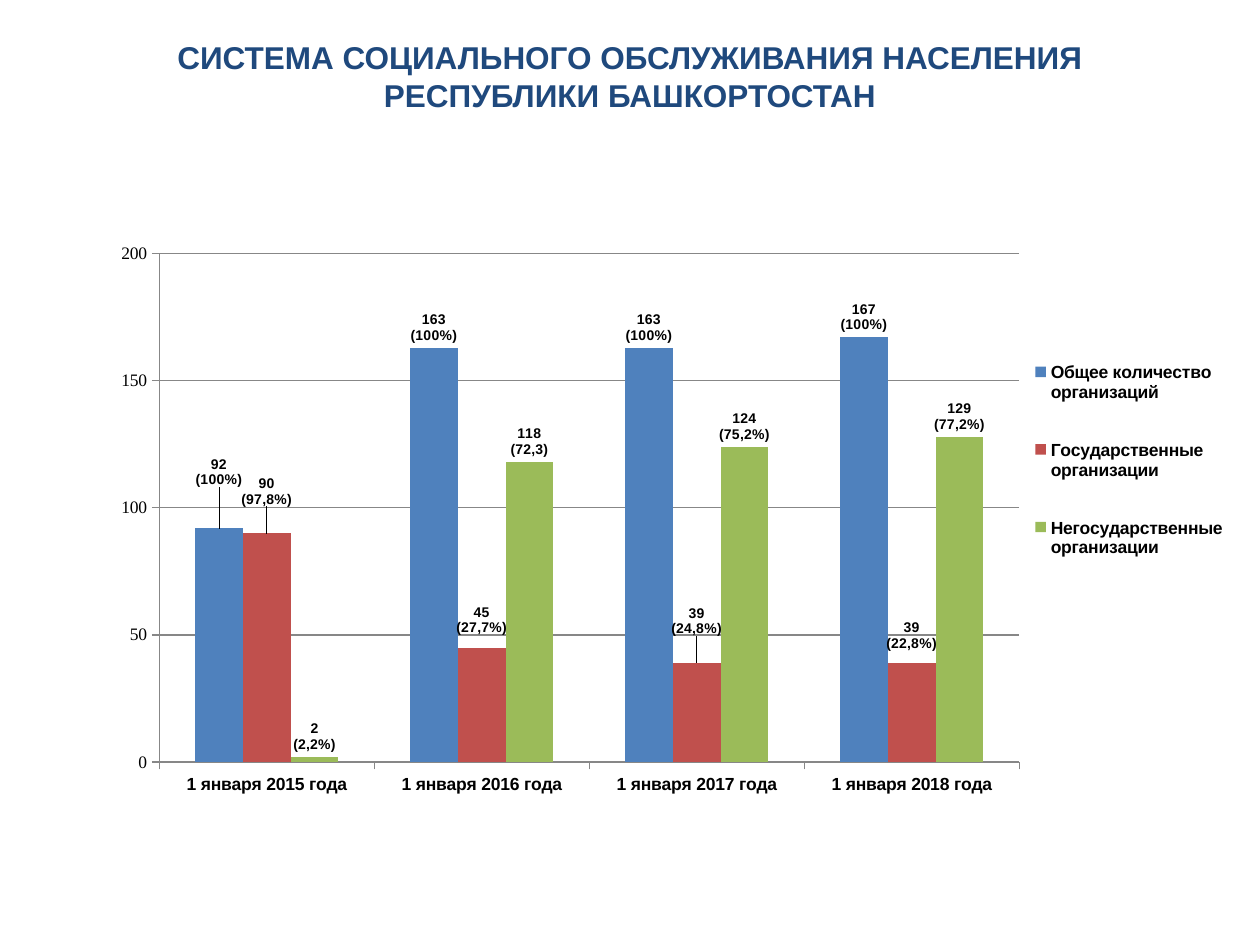
"""Build the slide on social service organisations of Bashkortostan."""
from typing import NamedTuple

from lxml.etree import SubElement
from pptx import Presentation
from pptx.chart.data import CategoryChartData as ChartData
from pptx.dml.color import RGBColor
from pptx.enum.chart import XL_CHART_TYPE as ChartType
from pptx.enum.chart import XL_LABEL_POSITION as LabelPosition
from pptx.enum.chart import XL_LEGEND_POSITION as LegendPosition
from pptx.enum.chart import XL_TICK_MARK as TickMark
from pptx.enum.text import MSO_ANCHOR as Anchor
from pptx.enum.text import PP_ALIGN as Align
from pptx.oxml import parse_xml
from pptx.oxml.ns import nsdecls, qn
from pptx.util import Cm, Pt

NAVY = RGBColor(0x1F, 0x49, 0x7D)
BLUE = RGBColor(0x4F, 0x81, 0xBD)
RED = RGBColor(0xC0, 0x50, 0x4D)
GREEN = RGBColor(0x9B, 0xBB, 0x59)
BLACK = RGBColor(0, 0, 0)
GREY = RGBColor(0x87, 0x87, 0x87)
HEADING = ("СИСТЕМА СОЦИАЛЬНОГО ОБСЛУЖИВАНИЯ НАСЕЛЕНИЯ", "РЕСПУБЛИКИ БАШКОРТОСТАН")
YEARS = range(2015, 2019)


class Group(NamedTuple):
    name: str
    color: RGBColor
    values: tuple[int, ...]
    labels: tuple[tuple[str, str], ...]
    shifts: dict[int, tuple[float, float]]


GROUPS = (
    Group("Общее количество организаций", BLUE, (92, 163, 163, 167),
          (("92", "(100%)"), ("163", "(100%)"), ("163", "(100%)"), ("167", "(100%)")),
          {0: (0, -0.05)}),
    Group("Государственные организации", RED, (90, 45, 39, 39),
          (("90", "(97,8%)"), ("45", "(27,7%)"), ("39", "(24,8%)"), ("39", "(22,8%)")),
          {0: (0, -0.03), 1: (0, -0.01), 2: (0, -0.03), 3: (0, -0.01)}),
    Group("Негосударственные организации", GREEN, (2, 118, 124, 128),
          (("2", "(2,2%)"), ("118", "(72,3)"), ("124", "(75,2%)"), ("129", "(77,2%)")),
          {}),
)


def make_layout(**settings):
    """Return a manual chart layout holding the given settings."""
    layout = parse_xml(f"<c:layout {nsdecls('c')}><c:manualLayout/></c:layout>")
    for name, value in settings.items():
        SubElement(layout[0], qn(f"c:{name}")).set("val", str(value))
    return layout


def set_font(font, name: str, size: float, bold: bool, color: RGBColor) -> None:
    """Set the face, size, weight and colour of a font."""
    font.name, font.size, font.bold = name, Pt(size), bold
    font.color.rgb = color


def add_heading(page) -> None:
    """Add the two-line heading."""
    box = page.shapes.add_textbox(Cm(0.3), Cm(0.53), Cm(24.8), Cm(2.01))
    frame = box.text_frame
    frame.word_wrap = True
    frame.vertical_anchor = Anchor.MIDDLE
    para = frame.paragraphs[0]
    para.alignment = Align.CENTER
    for index, line in enumerate(HEADING):
        if index:
            para.add_line_break()
        span = para.add_run()
        span.text = line
        set_font(span.font, "Arial", 18, True, NAVY)


def style_series(series, group: Group) -> None:
    """Colour a series and write its point labels."""
    series.format.fill.solid()
    series.format.fill.fore_color.rgb = group.color
    series.invert_if_negative = False
    labels = series.data_labels
    labels.show_value = True
    labels.position = LabelPosition.OUTSIDE_END
    set_font(labels.font, "Arial", 8, True, BLACK)
    for index, lines in enumerate(group.labels):
        label = series.points[index].data_label
        frame = label.text_frame
        for number, line in enumerate(lines):
            para = frame.add_paragraph() if number else frame.paragraphs[0]
            span = para.add_run()
            span.text = line
            set_font(span.font, "Arial", 8, True, BLACK)
        label.position = LabelPosition.OUTSIDE_END
    for item in labels._element.findall(qn("c:dLbl")):
        index = int(item.find(qn("c:idx")).get("val"))
        if index in group.shifts:
            across, down = group.shifts[index]
            item.insert(1, make_layout(x=across, y=down))


def style_axes(chart) -> None:
    """Format both axes and the gridlines."""
    years, counts = chart.category_axis, chart.value_axis
    for axis, face, bold in ((years, "Arial", True), (counts, "Times New Roman", False)):
        axis.major_tick_mark = TickMark.OUTSIDE
        axis.minor_tick_mark = TickMark.NONE
        axis.format.line.color.rgb = GREY
        set_font(axis.tick_labels.font, face, 10, bold, BLACK)
    counts.minimum_scale, counts.maximum_scale, counts.major_unit = 0, 200, 50
    counts.has_major_gridlines = True
    counts.major_gridlines.format.line.color.rgb = GREY


def add_organisation_chart(page) -> None:
    """Add the clustered column chart with its legend."""
    data = ChartData()
    data.categories = [f"1 января {year} года" for year in YEARS]
    for group in GROUPS:
        data.add_series(group.name, group.values)
    chart = page.shapes.add_chart(ChartType.COLUMN_CLUSTERED, Cm(1.7), Cm(3.53),
                                  Cm(23.27), Cm(14.38), data).chart
    set_font(chart.font, "Times New Roman", 10, False, BLACK)
    chart.has_title = False
    plot = chart.plots[0]
    plot.gap_width, plot.overlap = 150, 0
    plot.vary_by_categories = False
    for series, group in zip(plot.series, GROUPS):
        style_series(series, group)
    style_axes(chart)

    chart.has_legend = True
    legend = chart.legend
    legend.position = LegendPosition.RIGHT
    legend.include_in_layout = False
    set_font(legend.font, "Arial", 10, True, BLACK)
    area = chart._chartSpace.chart.plotArea
    for owner, place, layout in (
        (area, 0, make_layout(layoutTarget="inner", xMode="edge", yMode="edge",
                              x=0.065, y=0.11, w=0.745, h=0.713)),
        (legend._element, 1, make_layout(xMode="edge", yMode="edge",
                                         x=0.81, y=0.21, w=0.19, h=0.38)),
    ):
        for old in owner.findall(qn("c:layout")):
            owner.remove(old)
        owner.insert(place, layout)


def main() -> None:
    """Build and save the deck."""
    deck = Presentation()
    deck.slide_width, deck.slide_height = Cm(25.4), Cm(19.05)
    page = deck.slides.add_slide(deck.slide_layouts[6])
    add_heading(page)
    add_organisation_chart(page)
    deck.save("out.pptx")


if __name__ == "__main__":
    main()
